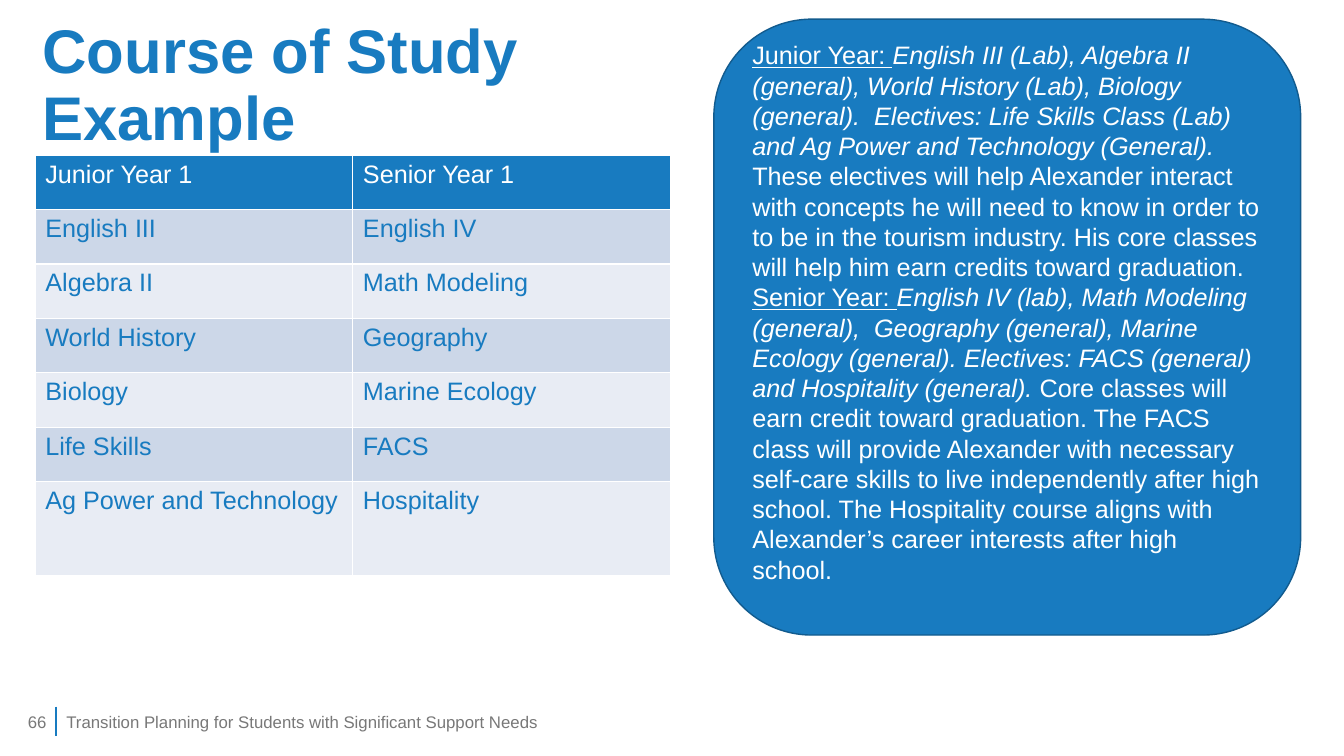
"""Build the Course of Study Example slide."""
from typing import NamedTuple

from lxml.etree import SubElement
from pptx import Presentation
from pptx.dml.color import RGBColor
from pptx.enum.shapes import MSO_CONNECTOR, MSO_SHAPE
from pptx.enum.text import MSO_ANCHOR, MSO_AUTO_SIZE, PP_ALIGN
from pptx.oxml.ns import qn
from pptx.slide import Slide
from pptx.text.text import _Paragraph
from pptx.util import Inches, Pt

BLUE = "187BC0"
DARK_BLUE = "125B8E"
WHITE = "FFFFFF"
GRAY = "787878"
BANDS = ("E8ECF4", "CCD7E8")


class Phrase(NamedTuple):
    text: str
    underline: bool = False
    italic: bool = False


class Footer(NamedTuple):
    text: str
    left: float
    width: float
    align: PP_ALIGN


COURSES = [
    ("Junior Year 1", "Senior Year 1"),
    ("English III", "English IV"),
    ("Algebra II", "Math Modeling"),
    ("World History", "Geography"),
    ("Biology", "Marine Ecology"),
    ("Life Skills", "FACS"),
    ("Ag Power and Technology", "Hospitality"),
]

YEARS = [
    [
        Phrase("Junior Year: ", underline=True),
        Phrase("English III (Lab), Algebra II (general), World History (Lab), "
               "Biology (general).  Electives: Life Skills Class (Lab) and "
               "Ag Power and Technology (General). ", italic=True),
        Phrase("These electives will help Alexander interact with concepts he "
               "will need to know in order to to be in the tourism industry. "
               "His core classes will help him earn credits toward graduation."),
    ],
    [
        Phrase("Senior Year: ", underline=True),
        Phrase("English IV (lab), Math Modeling (general),  Geography "
               "(general), Marine Ecology (general). Electives: FACS (general) "
               "and Hospitality (general).", italic=True),
        Phrase(" Core classes will earn credit toward graduation. The FACS "
               "class will provide Alexander with necessary self-care skills to "
               "live independently after high school. The Hospitality course "
               "aligns with Alexander’s career interests after high school."),
    ],
]

FOOTERS = [
    Footer("Transition Planning for Students with Significant Support Needs",
           0.56, 6.52, PP_ALIGN.LEFT),
    Footer("66", 0, 0.56, PP_ALIGN.RIGHT),
]


def rgb(color: str) -> RGBColor:
    """Turn a hex string into a colour."""
    return RGBColor.from_string(color)


def add_phrase(paragraph: _Paragraph, phrase: Phrase, size: float, color: str,
               bold: bool = False) -> None:
    """Add one formatted run to a paragraph."""
    run = paragraph.add_run()
    run.text = phrase.text
    font = run.font
    font.name = "Arial"
    font.size = Pt(size)
    font.bold = bold
    font.italic = phrase.italic
    font.underline = phrase.underline
    font.color.rgb = rgb(color)


def add_title(slide: Slide) -> None:
    """Place and fill the title."""
    title = slide.shapes.title
    title.left, title.top = Inches(0.32), Inches(0.14)
    title.width, title.height = Inches(12.69), Inches(1.45)
    frame = title.text_frame
    frame.auto_size = MSO_AUTO_SIZE.NONE
    frame.vertical_anchor = MSO_ANCHOR.MIDDLE
    heading = frame.paragraphs[0]
    heading.alignment = PP_ALIGN.LEFT
    heading.line_spacing = 0.9
    add_phrase(heading, Phrase("Course of Study "), 44, BLUE, bold=True)
    heading.add_line_break()
    add_phrase(heading, Phrase("Example"), 44, BLUE, bold=True)


def add_courses(slide: Slide) -> None:
    """Draw the table of courses by year."""
    courses = slide.shapes.add_table(
        len(COURSES), 2, Inches(0.35), Inches(1.54), Inches(6.3), Inches(4.17)).table
    for row_index, names in enumerate(COURSES):
        is_last = row_index == len(COURSES) - 1
        courses.rows[row_index].height = Inches(0.93 if is_last else 0.54)
        fill = BANDS[row_index % 2] if row_index else BLUE
        for column_index, name in enumerate(names):
            cell = courses.cell(row_index, column_index)
            cell.fill.solid()
            cell.fill.fore_color.rgb = rgb(fill)
            add_phrase(cell.text_frame.paragraphs[0], Phrase(name), 18,
                       BLUE if row_index else WHITE)


def add_explanation(slide: Slide) -> None:
    """Draw the rounded panel that explains both years."""
    panel = slide.shapes.add_shape(
        MSO_SHAPE.ROUNDED_RECTANGLE,
        Inches(7.08), Inches(0.19), Inches(5.82), Inches(6.11))
    panel.shadow.inherit = False
    panel.fill.solid()
    panel.fill.fore_color.rgb = rgb(BLUE)
    panel.line.color.rgb = rgb(DARK_BLUE)
    panel.line.width = Pt(1)
    frame = panel.text_frame
    frame.word_wrap = True
    frame.vertical_anchor = MSO_ANCHOR.MIDDLE
    frame.margin_bottom = Inches(0.35)
    for index, phrases in enumerate(YEARS):
        year = frame.add_paragraph() if index else frame.paragraphs[0]
        year.alignment = PP_ALIGN.LEFT
        for phrase in phrases:
            add_phrase(year, phrase, 18, WHITE)


def add_footer(slide: Slide) -> None:
    """Draw the page number, divider and course name."""
    divider = slide.shapes.add_connector(
        MSO_CONNECTOR.STRAIGHT, Inches(0.56), Inches(7.01), Inches(0.56), Inches(7.3))
    divider.line.color.rgb = rgb(BLUE)
    divider.line.width = Pt(1.5)
    SubElement(divider.element.spPr, qn("a:effectLst"))
    for footer in FOOTERS:
        frame = slide.shapes.add_textbox(
            Inches(footer.left), Inches(6.96), Inches(footer.width), Inches(0.4)).text_frame
        frame.word_wrap = True
        frame.vertical_anchor = MSO_ANCHOR.MIDDLE
        frame.paragraphs[0].alignment = footer.align
        add_phrase(frame.paragraphs[0], Phrase(footer.text), 12, GRAY)


def main() -> None:
    """Build and save the slide."""
    presentation = Presentation()
    presentation.slide_width = Inches(13.33)
    presentation.slide_height = Inches(7.5)
    slide = presentation.slides.add_slide(presentation.slide_layouts[5])
    add_title(slide)
    add_courses(slide)
    add_explanation(slide)
    add_footer(slide)
    presentation.save("out.pptx")


if __name__ == "__main__":
    main()
